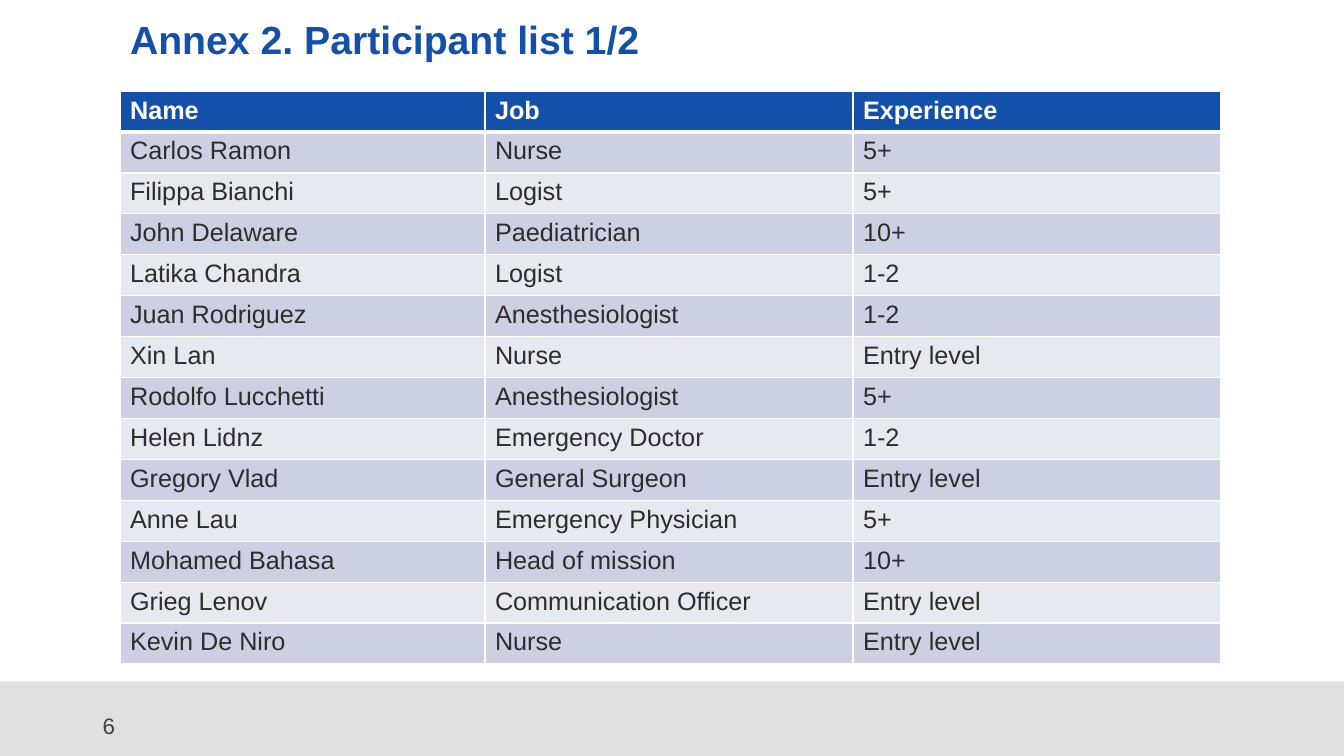
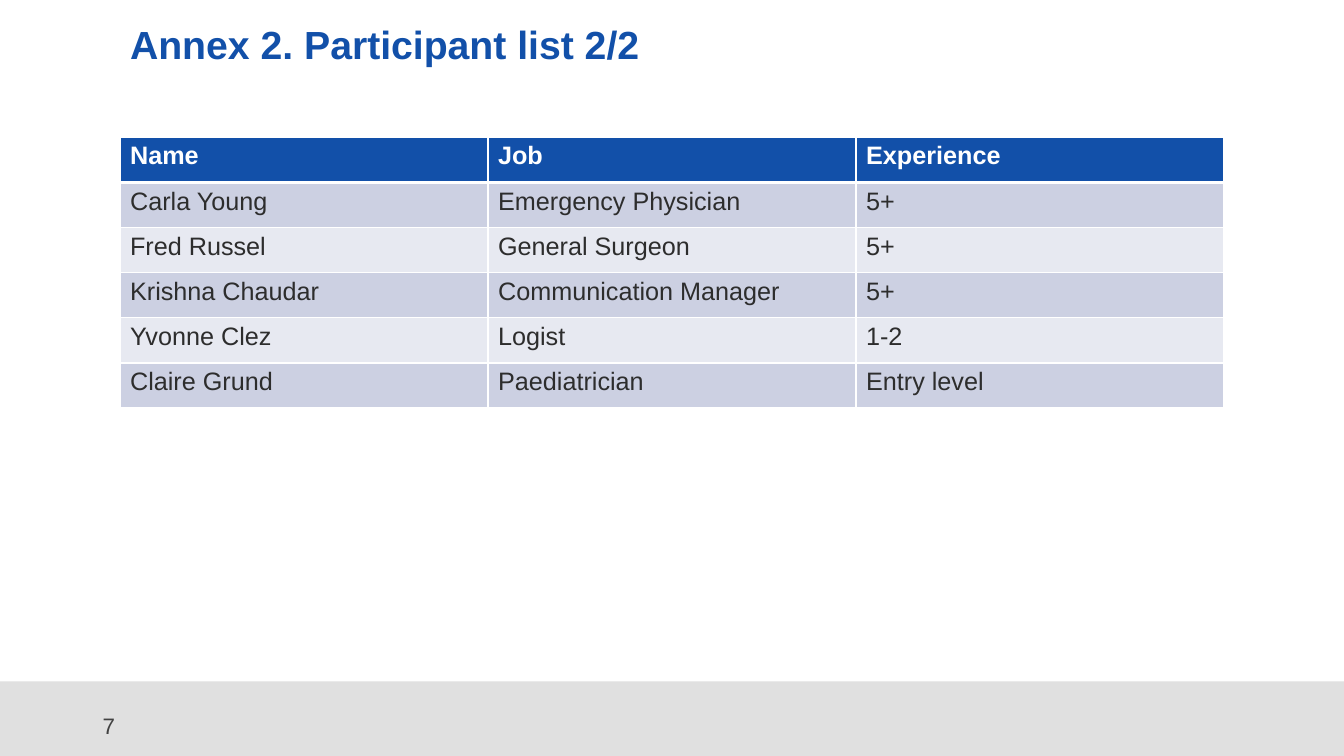
from dataclasses import dataclass

from lxml import etree
from pptx import Presentation
from pptx.dml.color import RGBColor
from pptx.enum.shapes import MSO_SHAPE as Shape
from pptx.enum.text import MSO_ANCHOR as Anchor, MSO_AUTO_SIZE as AutoSize, PP_ALIGN as Align
from pptx.oxml.ns import qn
from pptx.util import Inches, Pt


@dataclass(frozen=True)
class Theme:
    font: str = "Arial"
    blue: str = "1250A9"
    white: str = "FFFFFF"
    text: str = "2D2D2D"
    number: str = "424242"
    footer: str = "E0E0E0"
    bands: tuple = ("CCD0E2", "E7E9F1")
    title_size: int = 28
    table_size: int = 18
    number_size: int = 16


theme = Theme()
HEADINGS = ("Name", "Job", "Experience")
LEFT = 1.19

# Each slide: title, table position, column widths and participants
pages = [
    {
        "number": 6, "title": "Annex 2. Participant list 1/2", "title_top": 0.1,
        "table_top": 0.91, "table_height": 5.67, "header_height": 0.39,
        "columns": (3.62, 3.65, 3.65),
        "people": [
            ("Carlos Ramon", "Nurse", "5+"),
            ("Filippa Bianchi", "Logist", "5+"),
            ("John Delaware", "Paediatrician", "10+"),
            ("Latika Chandra", "Logist", "1-2"),
            ("Juan Rodriguez", "Anesthesiologist", "1-2"),
            ("Xin Lan", "Nurse", "Entry level"),
            ("Rodolfo Lucchetti", "Anesthesiologist", "5+"),
            ("Helen Lidnz", "Emergency Doctor", "1-2"),
            ("Gregory Vlad", "General Surgeon", "Entry level"),
            ("Anne Lau", "Emergency Physician", "5+"),
            ("Mohamed Bahasa", "Head of mission", "10+"),
            ("Grieg Lenov", "Communication Officer", "Entry level"),
            ("Kevin De Niro", "Nurse", "Entry level"),
        ],
    },
    {
        "number": 7, "title": "Annex 2. Participant list 2/2", "title_top": 0.15,
        "table_top": 1.36, "table_height": 2.69, "header_height": 0.45,
        "columns": (3.65, 3.65, 3.65),
        "people": [
            ("Carla Young", "Emergency Physician", "5+"),
            ("Fred Russel", "General Surgeon", "5+"),
            ("Krishna Chaudar", "Communication Manager", "5+"),
            ("Yvonne Clez", "Logist", "1-2"),
            ("Claire Grund", "Paediatrician", "Entry level"),
        ],
    },
]


def write(text_frame, text, size, color, bold=False):
    text_frame.text = text
    paragraph = text_frame.paragraphs[0]
    paragraph.alignment = Align.LEFT
    font = paragraph.runs[0].font
    font.name, font.size, font.bold = theme.font, Pt(size), bold
    font.color.rgb = RGBColor.from_string(color)


def set_borders(cell, top, bottom):
    properties = cell._tc.get_or_add_tcPr()
    widths = {"a:lnL": 1, "a:lnR": 1, "a:lnT": top, "a:lnB": bottom}
    for position, (tag, width) in enumerate(widths.items()):
        line = etree.Element(qn(tag), w=str(Pt(width)))
        fill = etree.SubElement(line, qn("a:solidFill"))
        etree.SubElement(fill, qn("a:srgbClr"), val=theme.white)
        properties.insert(position, line)


presentation = Presentation()
presentation.slide_width, presentation.slide_height = Inches(13.33), Inches(7.5)
layout = presentation.slide_layouts[5]

for page in pages:
    slide = presentation.slides.add_slide(layout)

    # Footer band, moved to the layout so that every slide shares it
    if page is pages[0]:
        band = slide.shapes.add_shape(Shape.RECTANGLE, 0, Inches(6.76), Inches(13.33), Inches(0.74))
        band.shadow.inherit = False
        band.fill.solid()
        band.fill.fore_color.rgb = RGBColor.from_string(theme.footer)
        band.line.fill.background()
        layout.shapes.element.append(band.element)

    # Slide number
    number = slide.shapes.add_textbox(Inches(0.92), Inches(7), Inches(3), Inches(0.4))
    number.text_frame.word_wrap = True
    number.text_frame.vertical_anchor = Anchor.MIDDLE
    write(number.text_frame, str(page["number"]), theme.number_size, theme.number)

    # Title
    title = slide.shapes.title
    title.left, title.top = Inches(LEFT), Inches(page["title_top"])
    title.width, title.height = Inches(5.76), Inches(0.57)
    title.text_frame.word_wrap = True
    title.text_frame.auto_size = AutoSize.SHAPE_TO_FIT_TEXT
    title.text_frame.vertical_anchor = Anchor.TOP
    write(title.text_frame, page["title"], theme.title_size, theme.blue, bold=True)

    # Participant table
    rows = [HEADINGS, *page["people"]]
    table = slide.shapes.add_table(
        len(rows), len(HEADINGS), Inches(LEFT), Inches(page["table_top"]),
        Inches(sum(page["columns"])), Inches(page["table_height"])).table
    for column, width in zip(table.columns, page["columns"]):
        column.width = Inches(width)
    body_height = (page["table_height"] - page["header_height"]) / len(page["people"])

    for row_index, values in enumerate(rows):
        header = row_index == 0
        table.rows[row_index].height = Inches(page["header_height"] if header else body_height)
        fill = theme.blue if header else theme.bands[(row_index - 1) % 2]
        for column_index, value in enumerate(values):
            cell = table.cell(row_index, column_index)
            cell.fill.solid()
            cell.fill.fore_color.rgb = RGBColor.from_string(fill)
            set_borders(cell, top=3 if row_index == 1 else 1, bottom=3 if header else 1)
            write(cell.text_frame, value, theme.table_size,
                  theme.white if header else theme.text, bold=header)

presentation.save("out.pptx")
